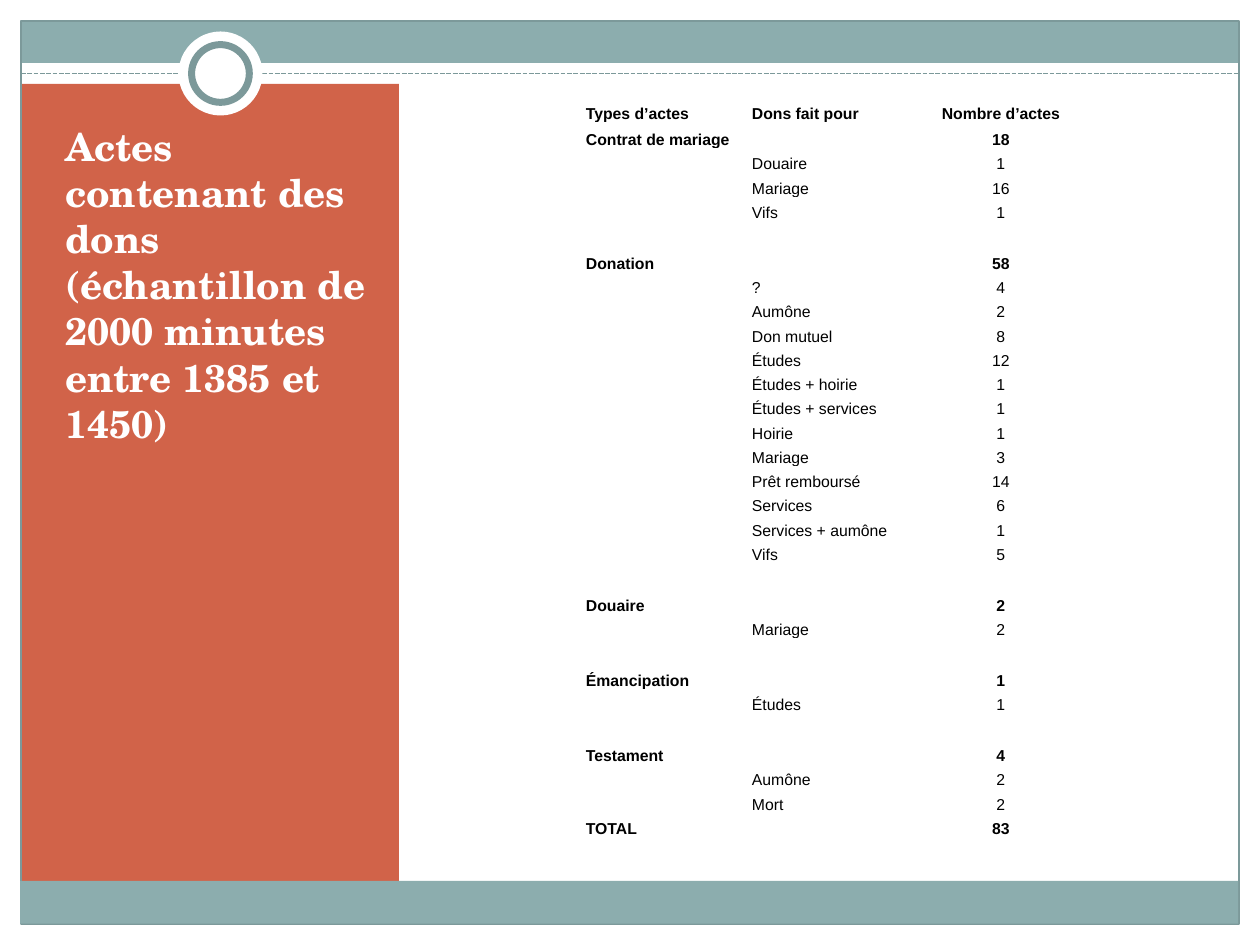
"""Build a slide listing the deeds that contain gifts, by type and purpose."""
from lxml.etree import SubElement
from pptx import Presentation
from pptx.dml.color import RGBColor
from pptx.enum.dml import MSO_LINE
from pptx.enum.shapes import MSO_CONNECTOR, MSO_SHAPE as SHAPE
from pptx.enum.text import MSO_ANCHOR as ANCHOR, MSO_AUTO_SIZE, PP_ALIGN as ALIGN
from pptx.oxml.ns import qn
from pptx.util import Pt

TITLE = "Actes contenant des dons (échantillon de 2000 minutes entre 1385 et 1450)"
HEADINGS = ("Types d’actes", "Dons fait pour", "Nombre d’actes")
DEEDS = [
    ("Contrat de mariage", 18, [("Douaire", 1), ("Mariage", 16), ("Vifs", 1)]),
    ("Donation", 58, [
        ("?", 4), ("Aumône", 2), ("Don mutuel", 8), ("Études", 12),
        ("Études + hoirie", 1), ("Études + services", 1), ("Hoirie", 1),
        ("Mariage", 3), ("Prêt remboursé", 14), ("Services", 6),
        ("Services + aumône", 1), ("Vifs", 5)]),
    ("Douaire", 2, [("Mariage", 2)]),
    ("Émancipation", 1, [("Études", 1)]),
    ("Testament", 4, [("Aumône", 2), ("Mort", 2)]),
]
TOTAL = ("TOTAL", "", "83")

COLORS = {"band": "8CADAE", "panel": "D16349", "rule": "7C999A",
          "white": "FFFFFF", "black": "000000"}
TITLE_FONT, TABLE_FONT = "TeX Gyre Schola", "Arial"
EDGE, FRAME_WIDTH, FRAME_HEIGHT = 12, 696, 516
RULE_Y, RING_X = 42, 126
TABLE_LEFT, TABLE_TOP = 331.9, 54.7
COLUMN_WIDTHS = (94.9, 99.2, 91.9)
ROW_HEIGHT, GROUP_HEIGHT = 13.88, 15.25


def rgb(name):
    return RGBColor.from_string(COLORS[name])


def add_block(slide, kind, left, top, width, height, fill=None, line_width=None):
    block = slide.shapes.add_shape(kind, Pt(left), Pt(top), Pt(width), Pt(height))
    block.shadow.inherit = False
    if fill:
        block.fill.solid()
        block.fill.fore_color.rgb = rgb(fill)
    else:
        block.fill.background()
    if line_width:
        block.line.color.rgb = rgb("rule")
        block.line.width = Pt(line_width)
    else:
        block.line.fill.background()


def add_circle(slide, diameter, line_width=None):
    add_block(slide, SHAPE.OVAL, RING_X - diameter / 2, RULE_Y - diameter / 2,
              diameter, diameter, "white", line_width)


def add_text(paragraph, words, font_name, size, color, bold):
    run = paragraph.add_run()
    run.text = words
    run.font.name = font_name
    run.font.size = Pt(size)
    run.font.bold = bold
    run.font.color.rgb = rgb(color)


def add_frame(slide):
    add_block(slide, SHAPE.RECTANGLE, EDGE, EDGE, FRAME_WIDTH, 24, "band")
    add_block(slide, SHAPE.RECTANGLE, EDGE, 48, 216, 462, "panel")
    add_block(slide, SHAPE.RECTANGLE, EDGE, EDGE, FRAME_WIDTH, FRAME_HEIGHT,
              line_width=0.75)
    rule = slide.shapes.add_connector(
        MSO_CONNECTOR.STRAIGHT, Pt(EDGE), Pt(RULE_Y), Pt(EDGE + FRAME_WIDTH), Pt(RULE_Y))
    rule.line.color.rgb = rgb("rule")
    rule.line.width = Pt(0.9)
    rule.line.dash_style = MSO_LINE.SQUARE_DOT
    SubElement(rule._element.spPr, qn("a:effectLst"))
    add_circle(slide, 48)
    add_circle(slide, 33, 4)
    add_block(slide, SHAPE.RECTANGLE, 11.5, 503.4, FRAME_WIDTH, 24.4, "band")


def add_title(slide):
    title = slide.shapes.title
    slide.shapes._spTree.append(title._element)
    title.left, title.top, title.width, title.height = Pt(30), Pt(72), Pt(186), Pt(186.5)
    frame = title.text_frame
    frame.word_wrap = True
    frame.auto_size = MSO_AUTO_SIZE.NONE
    frame.vertical_anchor = ANCHOR.BOTTOM
    paragraph = frame.paragraphs[0]
    paragraph.alignment = ALIGN.LEFT
    add_text(paragraph, TITLE, TITLE_FONT, 22, "white", True)


def table_rows():
    rows = [(HEADINGS, True, GROUP_HEIGHT, 0, 6)]
    for index, (deed, count, purposes) in enumerate(DEEDS):
        if index:
            rows.append((("", "", ""), False, ROW_HEIGHT, 0, 0))
        rows.append(((deed, "", str(count)), True, GROUP_HEIGHT, 6, 0))
        rows += [(("", purpose, str(number)), False, ROW_HEIGHT, 0, 0)
                 for purpose, number in purposes]
    rows.append((TOTAL, True, ROW_HEIGHT, 12, 0))
    return rows


def fill_cell(cell, words, bold, centred, before, after):
    cell.fill.background()
    cell.vertical_anchor = ANCHOR.BOTTOM
    cell.margin_left = cell.margin_right = Pt(2.9)
    cell.margin_top = cell.margin_bottom = 0
    paragraph = cell.text_frame.paragraphs[0]
    if not words:
        SubElement(paragraph._p, qn("a:endParaRPr"), sz="900")
        return
    paragraph.alignment = ALIGN.CENTER if centred else ALIGN.LEFT
    paragraph.space_before = Pt(before)
    paragraph.space_after = Pt(after)
    add_text(paragraph, words, TABLE_FONT, 9, "black", bold)


def add_deeds(slide):
    rows = table_rows()
    deeds = slide.shapes.add_table(
        len(rows), len(COLUMN_WIDTHS), Pt(TABLE_LEFT), Pt(TABLE_TOP),
        Pt(sum(COLUMN_WIDTHS)), Pt(sum(row[2] for row in rows))).table
    deeds.first_row = deeds.horz_banding = False
    for column, width in zip(deeds.columns, COLUMN_WIDTHS):
        column.width = Pt(width)
    last = len(COLUMN_WIDTHS) - 1
    for r, (texts, bold, height, before, after) in enumerate(rows):
        deeds.rows[r].height = Pt(height)
        for c, words in enumerate(texts):
            space = 0 if c == last and before == 6 else before
            fill_cell(deeds.cell(r, c), words, bold, c == last, space, after)
    deeds.cell(1, 0).merge(deeds.cell(1, 1))


def main():
    deck = Presentation()
    deck.slide_width, deck.slide_height = Pt(720), Pt(540)
    slide = deck.slides.add_slide(deck.slide_layouts[5])
    add_frame(slide)
    add_title(slide)
    add_deeds(slide)
    deck.save("out.pptx")


if __name__ == "__main__":
    main()
